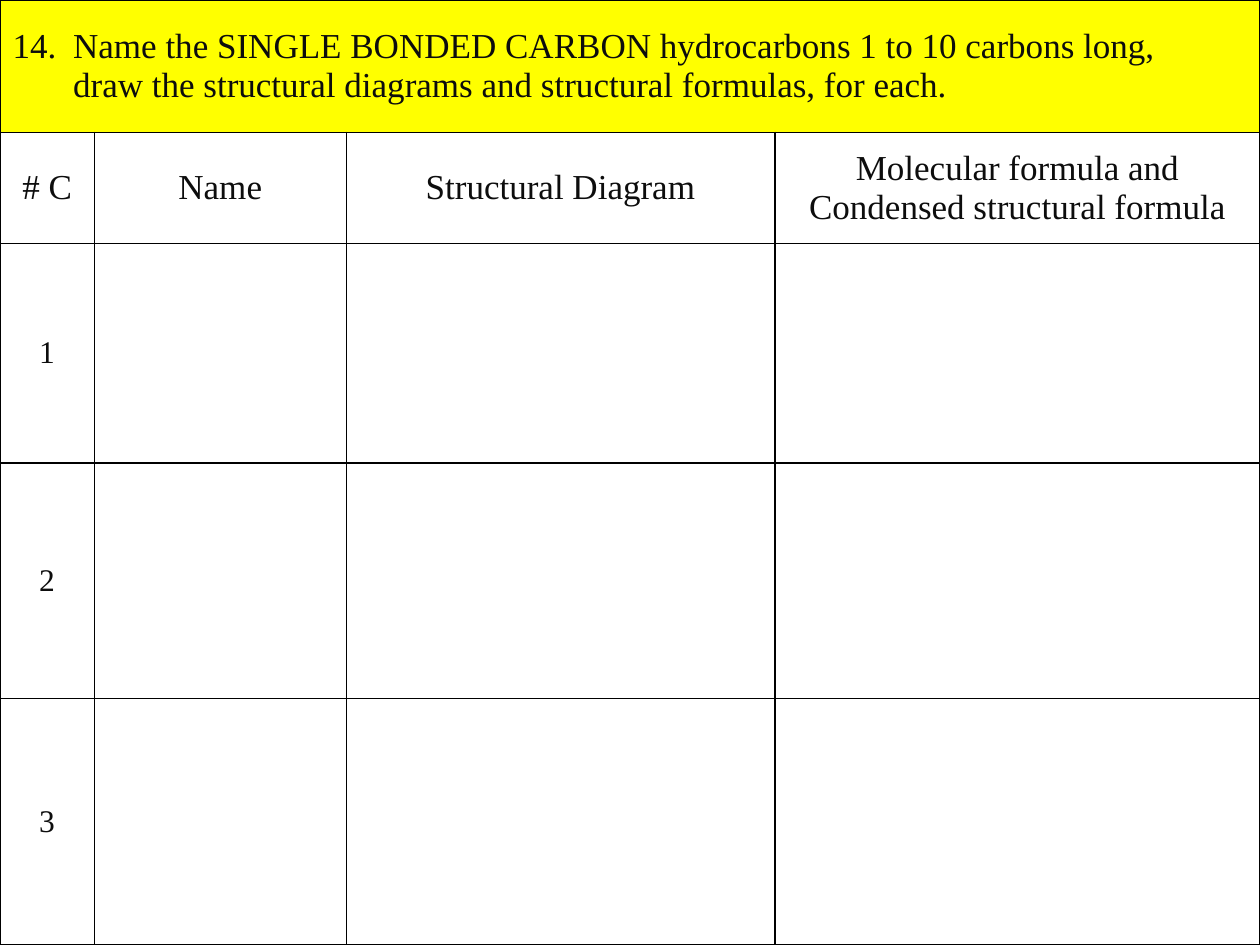
from lxml import etree
from pptx import Presentation
from pptx.dml.color import RGBColor
from pptx.enum.text import MSO_ANCHOR, PP_ALIGN
from pptx.oxml.ns import qn
from pptx.util import Cm, Pt

LEFT, CENTER = PP_ALIGN.LEFT, PP_ALIGN.CENTER
MIDDLE = MSO_ANCHOR.MIDDLE

YELLOW = RGBColor(0xFF, 0xFF, 0x00)
WHITE = RGBColor(0xFF, 0xFF, 0xFF)
BLACK = RGBColor(0x00, 0x00, 0x00)
INK = RGBColor(0x0D, 0x0D, 0x0D)

FONT = "Times New Roman"
SLIDE_WIDTH, SLIDE_HEIGHT = Cm(25.4), Cm(19.05)
COLUMN_WIDTHS = [1.9, 5.08, 8.64, 9.78]
ROW_HEIGHTS = [2.67, 2.24, 4.42, 4.75, 4.97]
QUESTION_INDENT = Cm(1.22)

# The tab reaches the hanging indent; the vertical tab is a line break.
QUESTION = (
    "14.\tName the SINGLE BONDED CARBON hydrocarbons 1 to 10 carbons long,"
    "\vdraw the structural diagrams and structural formulas, for each."
)
HEADINGS = [
    "# C",
    "Name",
    "Structural Diagram",
    "Molecular formula and Condensed structural formula",
]
CARBON_COUNTS = [1, 2, 3]


def write_text(cell, text, size=20, align=CENTER, color=INK):
    cell.vertical_anchor = MIDDLE
    paragraph = cell.text_frame.paragraphs[0]
    paragraph.text = text
    paragraph.alignment = align
    for run in paragraph.runs:
        run.font.name = FONT
        run.font.size = Pt(size)
        run.font.bold = False
        run.font.color.rgb = color
    return paragraph


def hang_indent(paragraph, indent):
    properties = paragraph._p.get_or_add_pPr()
    properties.set("marL", str(indent))
    properties.set("indent", str(-indent))


def draw_borders(cell, color=BLACK, width=Pt(1)):
    properties = cell._tc.get_or_add_tcPr()
    for side in ("a:lnL", "a:lnR", "a:lnT", "a:lnB"):
        line = etree.SubElement(properties, qn(side), w=str(width))
        fill = etree.SubElement(line, qn("a:solidFill"))
        etree.SubElement(fill, qn("a:srgbClr"), val=str(color))


def fill_cell(cell, color):
    cell.fill.solid()
    cell.fill.fore_color.rgb = color


def add_grid(slide):
    """Add the full-slide table with plain bordered white cells."""
    table = slide.shapes.add_table(
        len(ROW_HEIGHTS), len(COLUMN_WIDTHS), 0, 0, SLIDE_WIDTH, SLIDE_HEIGHT
    ).table
    table.first_row = table.horz_banding = False
    for column, width in zip(table.columns, COLUMN_WIDTHS):
        column.width = Cm(width)
    for row, height in zip(table.rows, ROW_HEIGHTS):
        row.height = Cm(height)
    for cell in table.iter_cells():
        draw_borders(cell)
        fill_cell(cell, WHITE)
    return table


def add_question(table):
    question = table.cell(0, 0)
    question.merge(table.cell(0, len(COLUMN_WIDTHS) - 1))
    fill_cell(question, YELLOW)
    hang_indent(write_text(question, QUESTION, align=LEFT), QUESTION_INDENT)


def main():
    presentation = Presentation()
    presentation.slide_width = SLIDE_WIDTH
    presentation.slide_height = SLIDE_HEIGHT
    slide = presentation.slides.add_slide(presentation.slide_layouts[6])

    table = add_grid(slide)
    add_question(table)
    for column, heading in enumerate(HEADINGS):
        write_text(table.cell(1, column), heading)
    for row, count in enumerate(CARBON_COUNTS, start=2):
        write_text(table.cell(row, 0), str(count), size=18)

    presentation.save("out.pptx")


if __name__ == "__main__":
    main()
